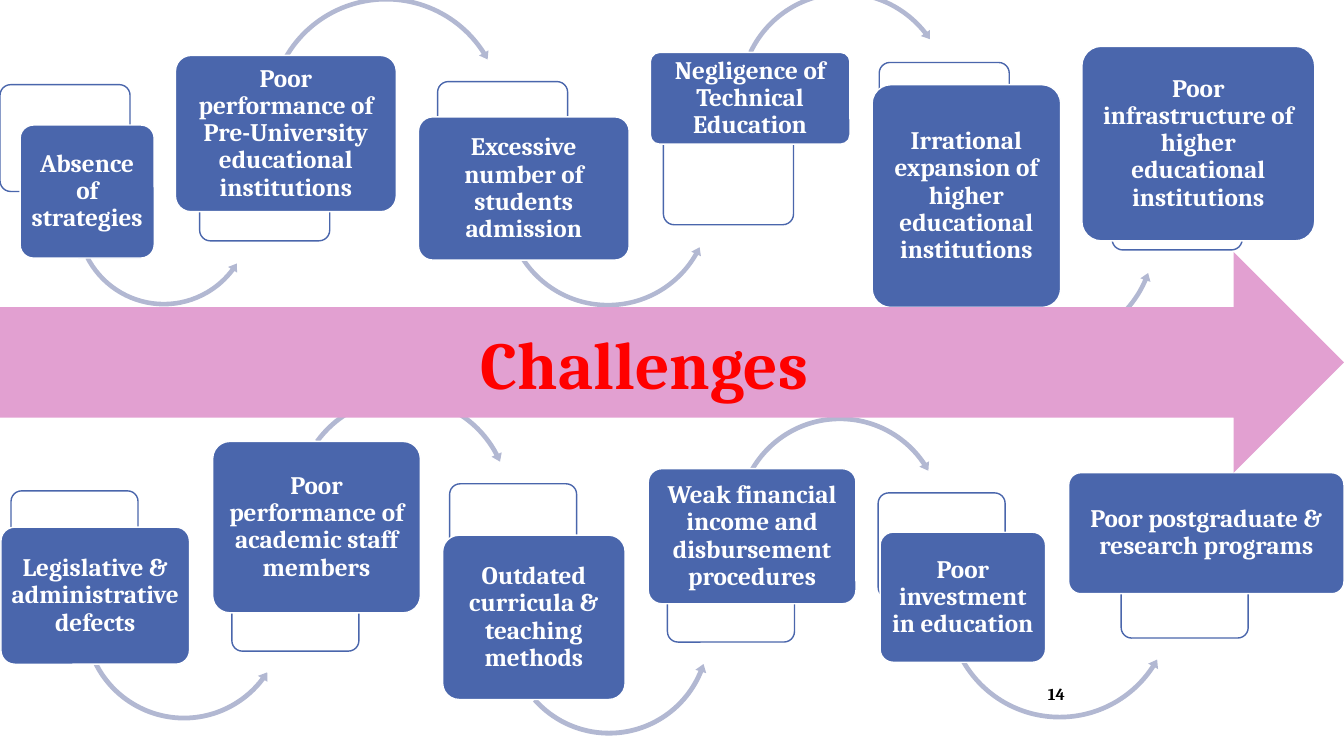
from lxml import etree
from pptx import Presentation
from pptx.dml.color import RGBColor
from pptx.enum.shapes import MSO_SHAPE
from pptx.enum.text import MSO_ANCHOR, PP_ALIGN
from pptx.oxml.ns import qn
from pptx.util import Inches, Pt

ROUND_RECT = MSO_SHAPE.ROUNDED_RECTANGLE
ARC_OVER = MSO_SHAPE.CIRCULAR_ARROW
ARC_UNDER = MSO_SHAPE.LEFT_CIRCULAR_ARROW
RIGHT_ARROW = MSO_SHAPE.RIGHT_ARROW
MIDDLE = MSO_ANCHOR.MIDDLE
CENTER, RIGHT = PP_ALIGN.CENTER, PP_ALIGN.RIGHT

WHITE = RGBColor(0xFF, 0xFF, 0xFF)
BLACK = RGBColor(0, 0, 0)
RED = RGBColor(0xFF, 0, 0)
BLUE = RGBColor(0x4A, 0x66, 0xAC)
PALE_BLUE = RGBColor(0xB2, 0xB8, 0xD2)
PINK = RGBColor(0xE2, 0xA0, 0xD1)

prs = Presentation()
prs.slide_width, prs.slide_height = Inches(13.33), Inches(7.5)
s = prs.slides.add_slide(prs.slide_layouts[6])


def add_shape(kind, x, y, w, h, fill, line=None, adj=()):
    sp = s.shapes.add_shape(kind, Inches(x), Inches(y), Inches(w), Inches(h))
    sp.shadow.inherit = False
    sp.fill.solid()
    sp.fill.fore_color.rgb = fill
    if line is None:
        sp.line.fill.background()
    else:
        sp.line.color.rgb = line
        sp.line.width = Pt(1)
    for i, value in enumerate(adj):
        sp.adjustments[i] = value
    return sp


def write(sp, text, size=18, color=WHITE, align=CENTER, spacing=1.0, inset=(0.1, 0.05)):
    tf = sp.text_frame
    tf.word_wrap = True
    tf.vertical_anchor = MIDDLE
    tf.margin_left = tf.margin_right = Inches(inset[0])
    tf.margin_top = tf.margin_bottom = Inches(inset[1])
    p = tf.paragraphs[0]
    p.alignment = align
    p.line_spacing = spacing
    r = p.add_run()
    r.text = text
    r.font.name = "Cambria"
    r.font.size = Pt(size)
    r.font.bold = True
    r.font.color.rgb = color


number = s.shapes.add_textbox(Inches(9.33), Inches(6.73), Inches(1.33), Inches(0.3))
write(number, "14", size=12, color=BLACK, align=RIGHT)

# text, box, frame corner, arc (left, top, size), arc adjustments
bottom_row = [
    ("Legislative & administrative defects", (0.01, 5.23, 1.87, 1.36), (0.11, 4.87),
     (0.79, 5.11, 2.07), (0.023, 2.752, 22.246, 91.984, 0.027)),
    ("Poor performance of academic staff members", (2.11, 4.38, 2.06, 1.7), (2.3, 5.42),
     (2.89, 3.89, 2.21), (0.021, 2.575, 199.46, 129.545, 0.025)),
    ("Outdated curricula & teaching methods", (4.39, 5.31, 1.81, 1.63), (4.46, 4.8),
     (5, 5.25, 2.08), (0.023, 2.746, 13.317, 83.06, 0.027)),
    ("Weak financial income and disbursement procedures", (6.43, 4.65, 2.06, 1.34), (6.62, 5.33),
     (7.27, 4.1, 2.12), (0.022, 2.692, 195.815, 126.017, 0.026)),
    ("Poor investment in education", (8.73, 5.28, 1.64, 1.29), (8.71, 4.89),
     (9.35, 4.85, 2.32), (0.02, 2.439, 19.767, 89.817, 0.024)),
    ("Poor postgraduate & research programs", (10.6, 4.69, 2.73, 1.2), (11.12, 5.29), None, None),
]
top_row = [
    ("Absence of strategies", (0.2, 1.24, 1.33, 1.32), (0, 0.84),
     (0.72, 1.26, 1.81), (0.025, 3.042, 22.127, 91.575, 0.029)),
    ("Poor performance of Pre-University educational institutions", (1.74, 0.55, 2.19, 1.55),
     (1.98, 1.33), (2.63, -0.06, 2.4), (0.019, 2.254, 196.567, 126.331, 0.022)),
    ("Excessive number of students admission", (4.15, 1.16, 2.09, 1.42), (4.34, 0.81),
     (4.97, 0.96, 2.12), (0.021, 2.569, 17.856, 87.777, 0.025)),
    ("Negligence of Technical Education", (6.45, 0.52, 1.98, 0.91), (6.58, 1.17),
     (7.29, -0.12, 2.16), (0.021, 2.521, 193.191, 123.223, 0.025)),
    ("Irrational expansion of higher educational institutions", (8.65, 0.84, 1.87, 2.21),
     (8.72, 0.62), (9.28, 1.25, 2.22), (0.02, 2.453, 14.011, 84.048, 0.024)),
    ("Poor infrastructure of higher educational institutions", (10.73, 0.46, 2.31, 1.93),
     (11.03, 1.42), None, None),
]

for row, frame_size in ((bottom_row, (1.26, 1.04)), (top_row, (1.29, 1.06))):
    for i, (text, box, corner, arc, arc_adj) in enumerate(row):
        frame = add_shape(ROUND_RECT, *corner, *frame_size, WHITE, BLUE, [0.1])
        color = frame.fill._xPr.find(qn("a:solidFill"))[0]
        etree.SubElement(color, qn("a:alpha")).set("val", "90000")
        if arc:
            x, y, size = arc
            add_shape(ARC_OVER if i % 2 else ARC_UNDER, x, y, size, size, PALE_BLUE, adj=arc_adj)
        sp = add_shape(ROUND_RECT, *box, BLUE, WHITE, [0.1])
        write(sp, text, spacing=0.9, inset=(0.04, 0.03))

banner = add_shape(RIGHT_ARROW, 0, 2.5, 13.33, 2.19, PINK)
write(banner, "Challenges", size=48, color=RED)

prs.save("out.pptx")
